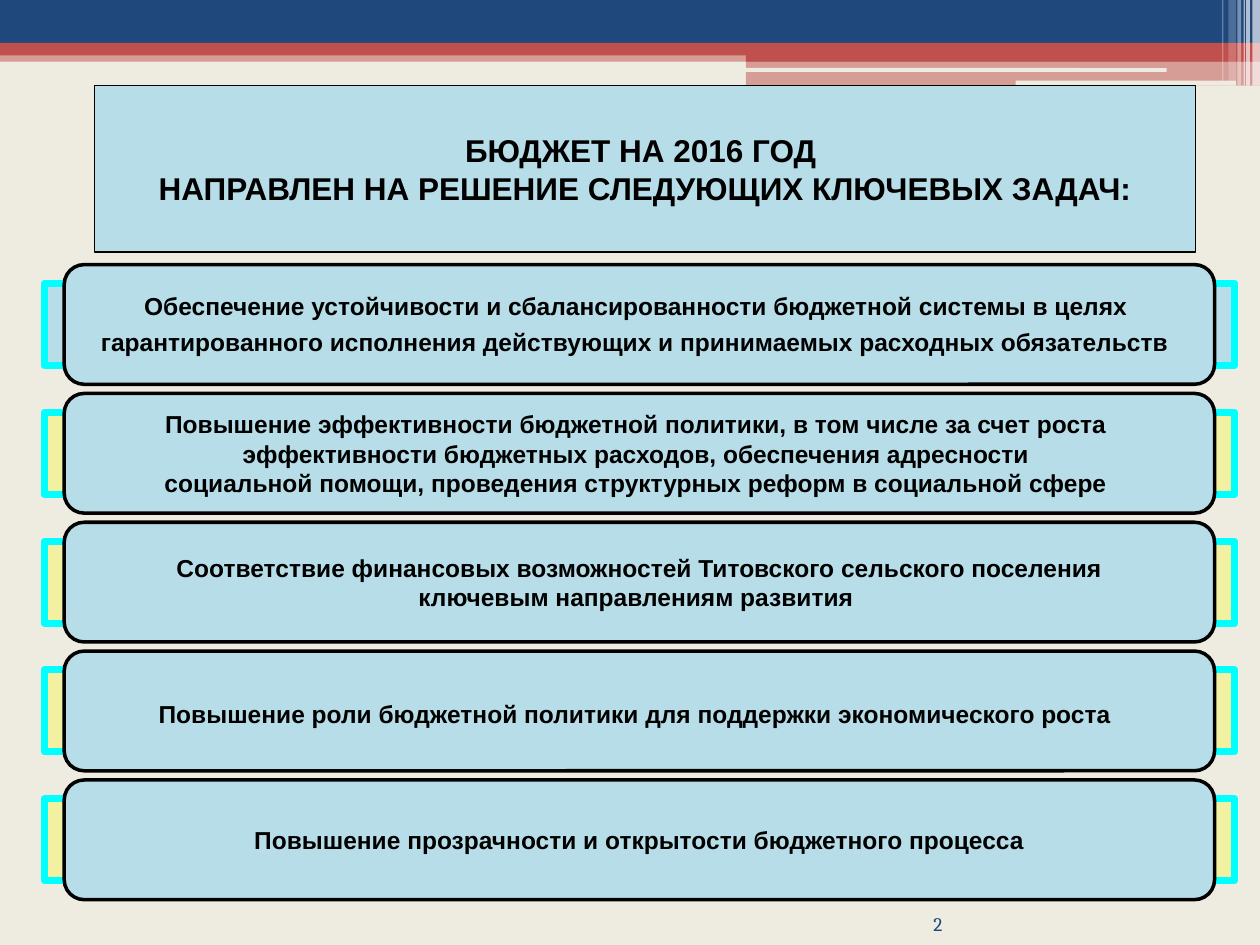
from dataclasses import dataclass

from lxml.etree import SubElement
from pptx import Presentation
from pptx.dml.color import RGBColor
from pptx.enum.shapes import MSO_SHAPE as Shape
from pptx.enum.text import MSO_ANCHOR as Anchor, PP_ALIGN as Align
from pptx.oxml.ns import qn
from pptx.util import Inches, Pt


@dataclass(frozen=True)
class Theme:
    page: str = "EEECE1"
    navy: str = "1F497D"
    red: str = "C0504D"
    white: str = "FFFFFF"
    black: str = "000000"
    panel: str = "B7DEE8"
    cyan: str = "00FFFF"
    yellow: str = "FFFF00"
    font: str = "Arial"
    number_font: str = "Cambria"
    title_size: int = 18
    task_size: int = 14
    number_size: int = 11
    frame_line: float = 4
    task_line: float = 2
    title_line: float = 0.75


@dataclass(frozen=True)
class Box:
    left: float
    top: float
    width: float
    height: float
    fill: str
    alpha: int = 100
    line: str = ""
    line_width: float = 0
    kind: Shape = Shape.RECTANGLE


@dataclass(frozen=True)
class Task:
    lines: tuple[str, ...]
    large_end: bool = False  # the last line closes with a larger space


T = Theme()

HEADER = [
    Box(0, 0.4, 10, 0.09, T.red, 50),
    Box(0, 0, 10, 0.34, T.navy),
    Box(0, 0.34, 10, 0.1, T.red),
    Box(5.92, 0.39, 4.08, 0.1, T.red),
    Box(5.92, 0.48, 4.08, 0.2, T.red, 50),
    Box(5.91, 0.54, 3.35, 0.03, T.page, kind=Shape.ROUNDED_RECTANGLE),
    Box(8.06, 0.64, 1.75, 0.04, T.page, kind=Shape.ROUNDED_RECTANGLE),
]

# left, width, height, opacity
STRIPES = [
    (9.94, 0.06, 0.68, 65),
    (9.89, 0.03, 0.68, 65),
    (9.87, 0.01, 0.68, 60),
    (9.82, 0.03, 0.68, 40),
    (9.75, 0.06, 0.64, 20),
    (9.7, 0.01, 0.64, 30),
]

TITLE = ("БЮДЖЕТ НА 2016 ГОД ", "НАПРАВЛЕН НА РЕШЕНИЕ СЛЕДУЮЩИХ КЛЮЧЕВЫХ ЗАДАЧ:")

TASKS = [
    Task(("Обеспечение устойчивости и сбалансированности бюджетной системы в целях ",
          "гарантированного исполнения действующих и принимаемых расходных обязательств"),
         large_end=True),
    Task(("Повышение эффективности бюджетной политики, в том числе за счет роста ",
          "эффективности бюджетных расходов, обеспечения адресности ",
          "социальной помощи, проведения структурных реформ в социальной сфере ")),
    Task(("Соответствие финансовых возможностей Титовского сельского поселения",
          "ключевым направлениям развития ")),
    Task(("Повышение роли бюджетной политики для поддержки экономического роста",),
         large_end=True),
    Task(("Повышение прозрачности и открытости бюджетного процесса",)),
]
FIRST_TOP, LAST_TOP = 2.1, 6.19


def draw_box(slide, box: Box):
    s = slide.shapes.add_shape(box.kind, Inches(box.left), Inches(box.top),
                               Inches(box.width), Inches(box.height))
    s.shadow.inherit = False
    s.fill.solid()
    s.fill.fore_color.rgb = RGBColor.from_string(box.fill)
    if box.alpha < 100:
        color = s.fill._xPr.find(qn("a:solidFill"))[0]
        SubElement(color, qn("a:alpha"), val=str(box.alpha * 1000))
    if box.line:
        s.line.color.rgb = RGBColor.from_string(box.line)
        s.line.width = Pt(box.line_width)
    else:
        s.line.fill.background()
    return s


def add_run(p, text: str, size: float, bold: bool = True,
            font: str = T.font, color: str = T.black) -> None:
    r = p.add_run()
    r.text = text
    style = {"name": font, "size": Pt(size), "bold": bold}
    for name, value in style.items():
        setattr(r.font, name, value)
    r.font.color.rgb = RGBColor.from_string(color)


def write_lines(s, lines: tuple[str, ...], size: float):
    """Writes centred lines and returns the last paragraph."""
    tf = s.text_frame
    tf.word_wrap = False
    tf.vertical_anchor = Anchor.MIDDLE
    for i, line in enumerate(lines):
        p = tf.add_paragraph() if i else tf.paragraphs[0]
        p.alignment = Align.CENTER
        add_run(p, line, size)
    return p


def draw_task(slide, index: int, task: Task) -> None:
    top = FIRST_TOP + index * (LAST_TOP - FIRST_TOP) / (len(TASKS) - 1)
    fill, alpha = (T.yellow, 28) if index else (T.panel, 100)
    draw_box(slide, Box(0.35, top + 0.15, 9.45, 0.65, fill, alpha, T.cyan, T.frame_line))
    s = draw_box(slide, Box(0.51, top, 9.13, 0.95, T.panel, 100, T.black, T.task_line,
                            Shape.ROUNDED_RECTANGLE))
    p = write_lines(s, task.lines, T.task_size)
    if task.large_end:
        add_run(p, " ", T.title_size, bold=False)


def draw_number(slide, text: str) -> None:
    tf = slide.shapes.add_textbox(Inches(6.84), Inches(7.17),
                                  Inches(0.64), Inches(0.25)).text_frame
    layout = {"word_wrap": True, "vertical_anchor": Anchor.BOTTOM, "margin_left": 0,
              "margin_right": 0, "margin_top": 0, "margin_bottom": 0}
    for name, value in layout.items():
        setattr(tf, name, value)
    p = tf.paragraphs[0]
    p.alignment = Align.RIGHT
    add_run(p, text, T.number_size, False, T.number_font, T.navy)


def main() -> None:
    prs = Presentation()
    prs.slide_width, prs.slide_height = Inches(10), Inches(7.5)
    slide = prs.slides.add_slide(prs.slide_layouts[6])
    slide.background.fill.solid()
    slide.background.fill.fore_color.rgb = RGBColor.from_string(T.page)

    # Header bands and corner stripes
    for box in HEADER:
        draw_box(slide, box)
    for left, width, height, alpha in STRIPES:
        draw_box(slide, Box(left, 0, width, height, T.white, alpha))

    # Slide number
    draw_number(slide, "2")

    # Title panel
    title = draw_box(slide, Box(0.75, 0.68, 8.74, 1.32, T.panel, 100,
                                T.black, T.title_line))
    write_lines(title, TITLE, T.title_size)

    # Key tasks
    for i, task in enumerate(TASKS):
        draw_task(slide, i, task)

    prs.save("out.pptx")


if __name__ == "__main__":
    main()
